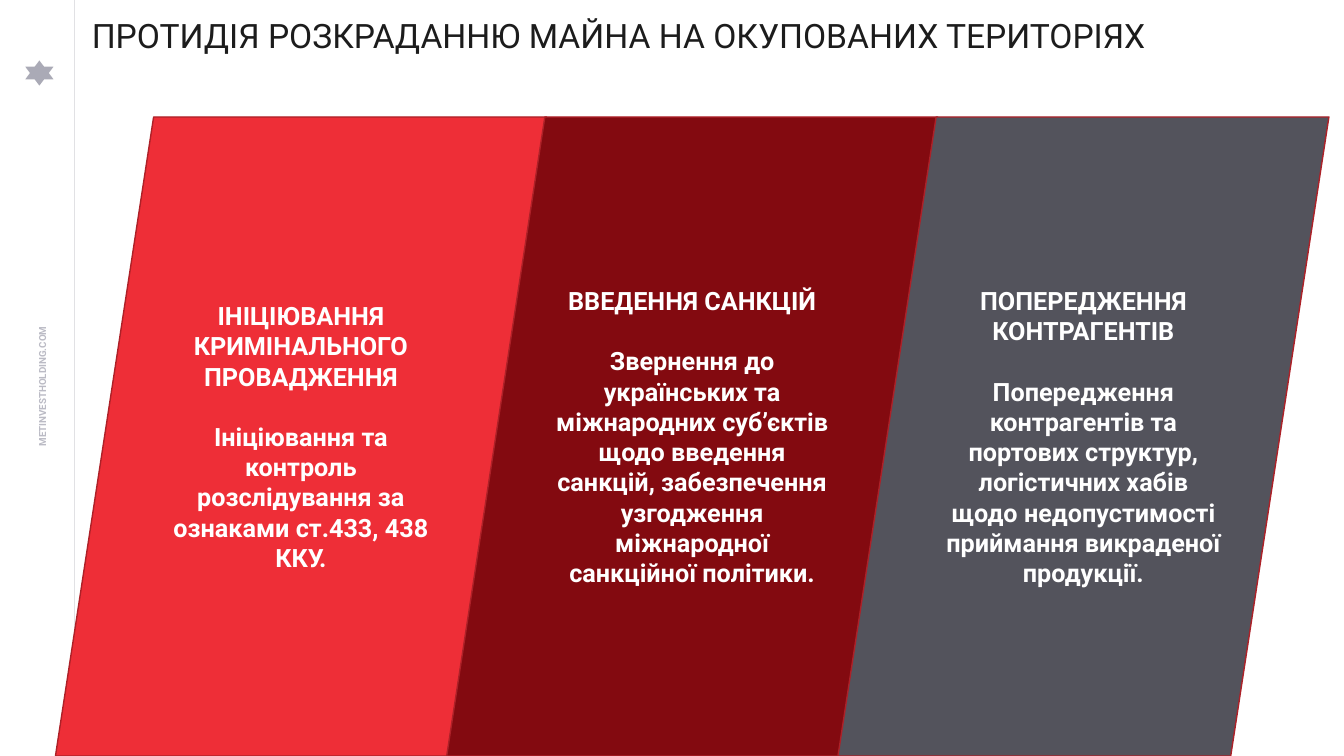
from dataclasses import dataclass

import pptx
import pptx.dml.color
import pptx.enum.shapes
import pptx.enum.text
import pptx.oxml
import pptx.util

SHAPE = pptx.enum.shapes.MSO_SHAPE
ANCHOR = pptx.enum.text.MSO_ANCHOR
ALIGN = pptx.enum.text.PP_ALIGN
SLIDE_W, SLIDE_H = pptx.util.Inches(13.33), pptx.util.Inches(7.5)


@dataclass(frozen=True)
class Theme:
    font: str = "Roboto"
    title: str = "1C1C1C"
    panel_text: str = "FFFFFF"
    panel_line: str = "AD2128"
    red: str = "EE2E37"
    dark_red: str = "830A10"
    grey: str = "53535C"
    emblem: str = "AAAAB6"
    address: str = "BBBBC5"
    rule: str = "E1E1E4"
    title_size: float = 24
    panel_size: float = 18
    address_size: float = 7
    panel_gap: float = 21.5


@dataclass(frozen=True)
class Box:
    """Place and size in percent of the slide's width and height."""
    left: float
    top: float
    width: float
    height: float

    def emu(self) -> tuple[int, int, int, int]:
        return (x(self.left), y(self.top), x(self.width), y(self.height))


@dataclass(frozen=True)
class Panel:
    heading: str
    body: str
    fill: str


THEME = Theme()

PANELS = [
    Panel("ІНІЦІЮВАННЯ КРИМІНАЛЬНОГО ПРОВАДЖЕННЯ",
          "Ініціювання та контроль розслідування за ознаками ст.433, 438 ККУ.",
          THEME.red),
    Panel("ВВЕДЕННЯ САНКЦІЙ",
          "Звернення до українських та міжнародних суб’єктів щодо введення "
          "санкцій, забезпечення узгодження міжнародної санкційної політики.",
          THEME.dark_red),
    Panel("ПОПЕРЕДЖЕННЯ КОНТРАГЕНТІВ",
          "Попередження контрагентів та портових структур, логістичних хабів "
          "щодо недопустимості приймання викраденої продукції.",
          THEME.grey),
]
FIRST_PANEL = Box(4.13, 15.47, 36.53, 84.53)
PANEL_STEP = 29.11


def x(percent: float) -> int:
    return round(SLIDE_W * percent / 100)


def y(percent: float) -> int:
    return round(SLIDE_H * percent / 100)


def rgb(code: str) -> pptx.dml.color.RGBColor:
    return pptx.dml.color.RGBColor.from_string(code)


def write(tf, *texts: str, size: float, color: str, bold: bool = False,
          align=ALIGN.LEFT, anchor=ANCHOR.TOP, gap: float = 0,
          spacing: float = 1.0) -> None:
    """Fill a text frame, one paragraph for each text."""
    tf.word_wrap = True
    tf.vertical_anchor = anchor
    for i, text in enumerate(texts):
        p = tf.add_paragraph() if i else tf.paragraphs[0]
        p.alignment = align
        p.line_spacing = spacing
        if i:
            p.space_before = pptx.util.Pt(gap)
        r = p.add_run()
        r.text = text
        r.font.name = THEME.font
        r.font.size = pptx.util.Pt(size)
        r.font.bold = bold
        r.font.color.rgb = rgb(color)


def add_label(slide, box: Box, text: str, rotation: float = 0, **style) -> None:
    sp = slide.shapes.add_textbox(*box.emu())
    sp.rotation = rotation
    tf = sp.text_frame
    tf.margin_left = tf.margin_right = tf.margin_top = tf.margin_bottom = 0
    write(tf, text, **style)


def add_filled(slide, kind, box: Box, fill: str):
    sp = slide.shapes.add_shape(kind, *box.emu())
    sp.shadow.inherit = False
    sp.fill.solid()
    sp.fill.fore_color.rgb = rgb(fill)
    sp.line.fill.background()
    return sp


def add_rule(slide, left: float) -> None:
    line = slide.shapes.add_connector(
        pptx.enum.shapes.MSO_CONNECTOR.STRAIGHT, x(left), y(100), x(left), y(0))
    line.line.color.rgb = rgb(THEME.rule)
    line.line.width = pptx.util.Pt(0.75)
    line._element.spPr.append(pptx.oxml.parse_xml(
        '<a:effectLst xmlns:a="http://schemas.openxmlformats.org/drawingml/2006/main"/>'))


def add_panel(slide, panel: Panel, index: int) -> None:
    box = Box(FIRST_PANEL.left + index * PANEL_STEP, FIRST_PANEL.top,
              FIRST_PANEL.width, FIRST_PANEL.height)
    sp = add_filled(slide, SHAPE.FLOWCHART_DATA, box, panel.fill)
    sp.line.color.rgb = rgb(THEME.panel_line)
    sp.line.width = pptx.util.Pt(1)
    write(sp.text_frame, panel.heading, panel.body, size=THEME.panel_size,
          color=THEME.panel_text, bold=True, align=ALIGN.CENTER,
          anchor=ANCHOR.MIDDLE, gap=THEME.panel_gap)


def main() -> None:
    prs = pptx.Presentation()
    prs.slide_width, prs.slide_height = SLIDE_W, SLIDE_H
    slide = prs.slides.add_slide(prs.slide_layouts[6])

    # Side strip: emblem, web address and rule
    add_filled(slide, SHAPE.STAR_6_POINT, Box(1.88, 8, 2.1, 3.33), THEME.emblem)
    add_label(slide, Box(-19.5, 49.33, 44.86, 3.6), "METINVESTHOLDING.COM",
              rotation=270, size=THEME.address_size, color=THEME.address,
              bold=True, align=ALIGN.CENTER, anchor=ANCHOR.MIDDLE, spacing=1.5)
    add_rule(slide, 5.55)

    # Title
    add_label(slide, Box(6.83, 2, 83.95, 6.53),
              "ПРОТИДІЯ РОЗКРАДАННЮ МАЙНА НА ОКУПОВАНИХ ТЕРИТОРІЯХ",
              size=THEME.title_size, color=THEME.title)

    # Slanted panels
    for i, panel in enumerate(PANELS):
        add_panel(slide, panel, i)

    prs.save("out.pptx")


if __name__ == "__main__":
    main()
